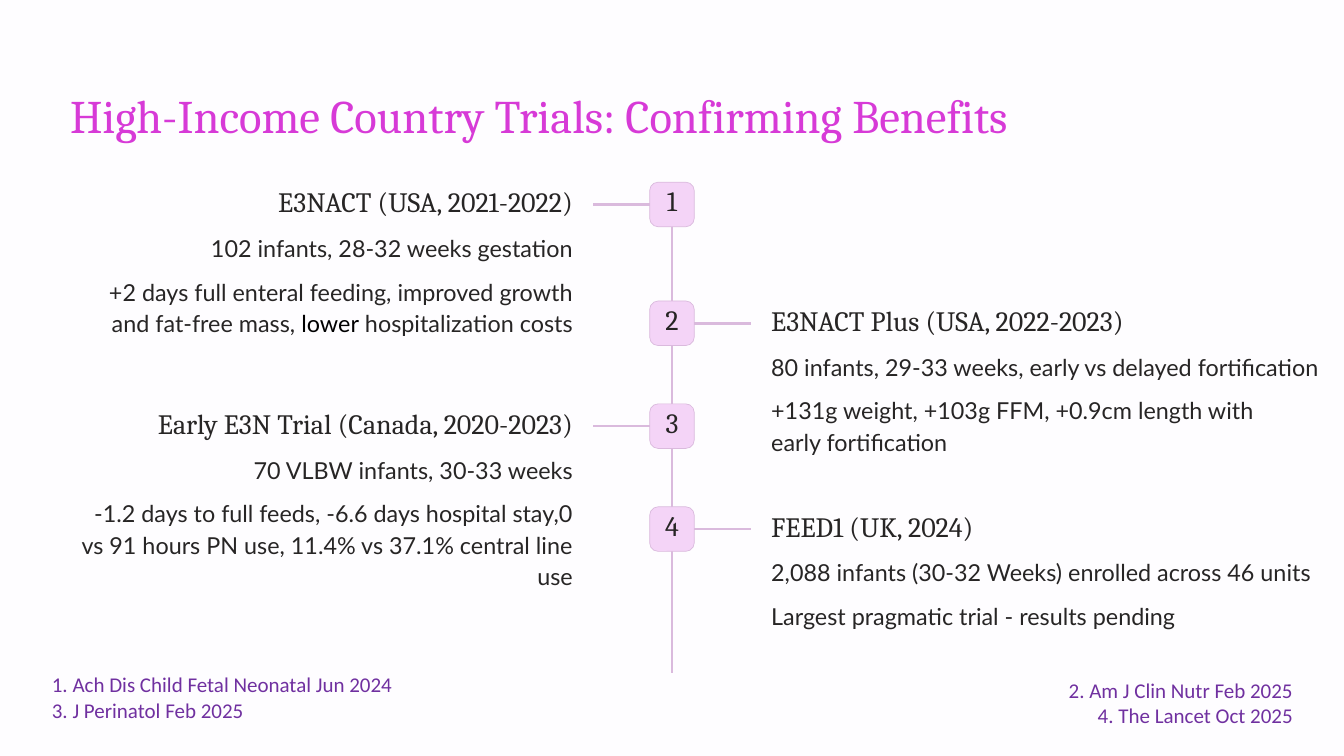
from lxml.etree import SubElement
from pptx import Presentation
from pptx.dml.color import RGBColor
from pptx.enum.shapes import MSO_CONNECTOR as CONNECTOR, MSO_SHAPE as SHAPE
from pptx.enum.text import MSO_ANCHOR as ANCHOR, MSO_AUTO_SIZE as AUTO_SIZE, PP_ALIGN as ALIGN
from pptx.oxml.ns import qn
from pptx.util import Pt

SERIF, SANS, NOTE_FONT = "Cambria", "Lato", "Calibri"
INK, BLACK, MAGENTA, PURPLE = "272525", "000000", "D73AD7", "7030A0"
PAPER, PINK, MAUVE = "FEFDFF", "F4D4F7", "DABADD"
CENTER, BADGE = 576, 38.2
COLUMN_WIDTH, LEFT_EDGE, RIGHT_EDGE = 431, 491, 661
STUB_REACH = 67.7

# Each trial: badge top, heading width, heading, sample, finding, finding lines.
TRIALS = [
    (156.2, 242, "E3NACT (USA, 2021-2022)", "102 infants, 28-32 weeks gestation",
     "+2 days full enteral feeding, improved growth and fat-free mass, |lower| hospitalization costs", 2),
    (258, 288, "E3NACT Plus (USA, 2022-2023)", "80 infants, 29-33 weeks, early vs delayed fortification",
     "+131g weight, +103g FFM, +0.9cm length with early fortification", 2),
    (346.2, 237, "Early E3N Trial (Canada, 2020-2023)", "70 VLBW infants, 30-33 weeks",
     "-1.2 days to full feeds, -6.6 days hospital stay,0 vs 91 hours PN use, "
     "11.4% vs 37.1% central line use", 2),
    (434.4, 200, "FEED1 (UK, 2024)", "2,088 infants (30-32 Weeks) enrolled across 46 units",
     "Largest pragmatic trial - results pending", 1),
]


def color(hex_code):
    """Turn a hex string into a colour."""
    return RGBColor.from_string(hex_code)


def style(para, font, size, hex_code, align=ALIGN.LEFT, spacing=None):
    """Format a whole paragraph."""
    para.alignment = align
    if spacing:
        para.line_spacing = Pt(spacing)
    para.font.name = font
    para.font.size = Pt(size)
    para.font.color.rgb = color(hex_code)


def clear_insets(frame, wrap):
    """Anchor text at the top of a frame without margins."""
    frame.margin_left = frame.margin_right = frame.margin_top = frame.margin_bottom = 0
    frame.vertical_anchor = ANCHOR.TOP
    frame.auto_size = AUTO_SIZE.NONE
    frame.word_wrap = wrap


def add_title(slide, text):
    """Fill and place the title placeholder."""
    title = slide.shapes.title
    title.left, title.top, title.width, title.height = Pt(60), Pt(72), Pt(960), Pt(50.4)
    clear_insets(title.text_frame, False)
    para = title.text_frame.paragraphs[0]
    para.text = text
    style(para, SERIF, 40, MAGENTA, spacing=50)


def add_label(slide, area, text, font, size, spacing, align, wrap=False):
    """Add one paragraph, with text between bars in black."""
    box = slide.shapes.add_textbox(*map(Pt, area))
    clear_insets(box.text_frame, wrap)
    para = box.text_frame.paragraphs[0]
    for index, piece in enumerate(text.split("|")):
        span = para.add_run()
        span.text = piece
        if index % 2:
            span.font.color.rgb = color(BLACK)
    style(para, font, size, INK, align, spacing)


def add_line(slide, x1, y1, x2, y2):
    """Draw a mauve timeline segment."""
    line = slide.shapes.add_connector(CONNECTOR.STRAIGHT, Pt(x1), Pt(y1), Pt(x2), Pt(y2))
    line.line.color.rgb = color(MAUVE)
    line.line.width = Pt(2.2)
    SubElement(line._element.spPr, qn("a:effectLst"))
    return line


def add_badge(slide, top, number):
    """Draw a numbered badge on the timeline."""
    badge = slide.shapes.add_shape(
        SHAPE.ROUNDED_RECTANGLE, Pt(CENTER - BADGE / 2), Pt(top), Pt(BADGE), Pt(BADGE))
    badge.adjustments[0] = 0.19
    badge.shadow.inherit = False
    badge.fill.solid()
    badge.fill.fore_color.rgb = color(PINK)
    badge.line.color.rgb = color(MAUVE)
    badge.line.width = Pt(0.6)
    frame = badge.text_frame
    clear_insets(frame, False)
    frame.margin_top = Pt(4)
    para = frame.paragraphs[0]
    para.text = str(number)
    style(para, SERIF, 24, INK, ALIGN.CENTER, 24)
    return badge


def add_trial(slide, number, top, heading_width, heading, sample, finding, lines):
    """Add a badge, its stub and the trial's texts; odd numbers go left."""
    on_left = number % 2 == 1
    align = ALIGN.RIGHT if on_left else ALIGN.LEFT
    badge = add_badge(slide, top, number)
    middle = top + BADGE / 2
    end = CENTER - STUB_REACH if on_left else CENTER + STUB_REACH
    stub = add_line(slide, CENTER, middle, end, middle)
    stub.begin_connect(badge, 1 if on_left else 3)

    def area(offset, width, height):
        """Place a box against the column's inner edge."""
        return LEFT_EDGE - width if on_left else RIGHT_EDGE, top + offset, width, height

    add_label(slide, area(6, heading_width, 25), heading, SERIF, 24, 25, align)
    add_label(slide, area(41.4, COLUMN_WIDTH, 27), sample, SANS, 20, 27, align)
    add_label(slide, area(78.8, COLUMN_WIDTH, 27 * lines), finding, SANS, 20, 27, align, True)
    return badge


def add_references(slide, area, references, align):
    """Add a block of source references."""
    frame = slide.shapes.add_textbox(*map(Pt, area)).text_frame
    frame.word_wrap = True
    frame.auto_size = AUTO_SIZE.SHAPE_TO_FIT_TEXT
    frame.text = "\n".join(references)
    for para in frame.paragraphs:
        style(para, NOTE_FONT, 18, PURPLE, align)


def main():
    """Build and save the slide."""
    deck = Presentation()
    deck.slide_width, deck.slide_height = Pt(1152), Pt(648)
    slide = deck.slides.add_slide(deck.slide_layouts[5])
    slide.background.fill.solid()
    slide.background.fill.fore_color.rgb = color(PAPER)
    add_title(slide, "High-Income Country Trials: Confirming Benefits")
    spine = add_line(slide, CENTER, TRIALS[0][0], CENTER, 576.7)
    badges = [add_trial(slide, number, *trial) for number, trial in enumerate(TRIALS, 1)]
    spine.begin_connect(badges[0], 0)
    add_references(slide, (539.3, 577.4, 576, 51),
                   ["2. Am J Clin Nutr Feb 2025", "4. The Lancet Oct 2025"], ALIGN.RIGHT)
    add_references(slide, (37.4, 572.4, 318, 51),
                   ["1. Ach Dis Child Fetal Neonatal Jun 2024", "3. J Perinatol Feb 2025"], ALIGN.LEFT)
    deck.save("out.pptx")


if __name__ == "__main__":
    main()
